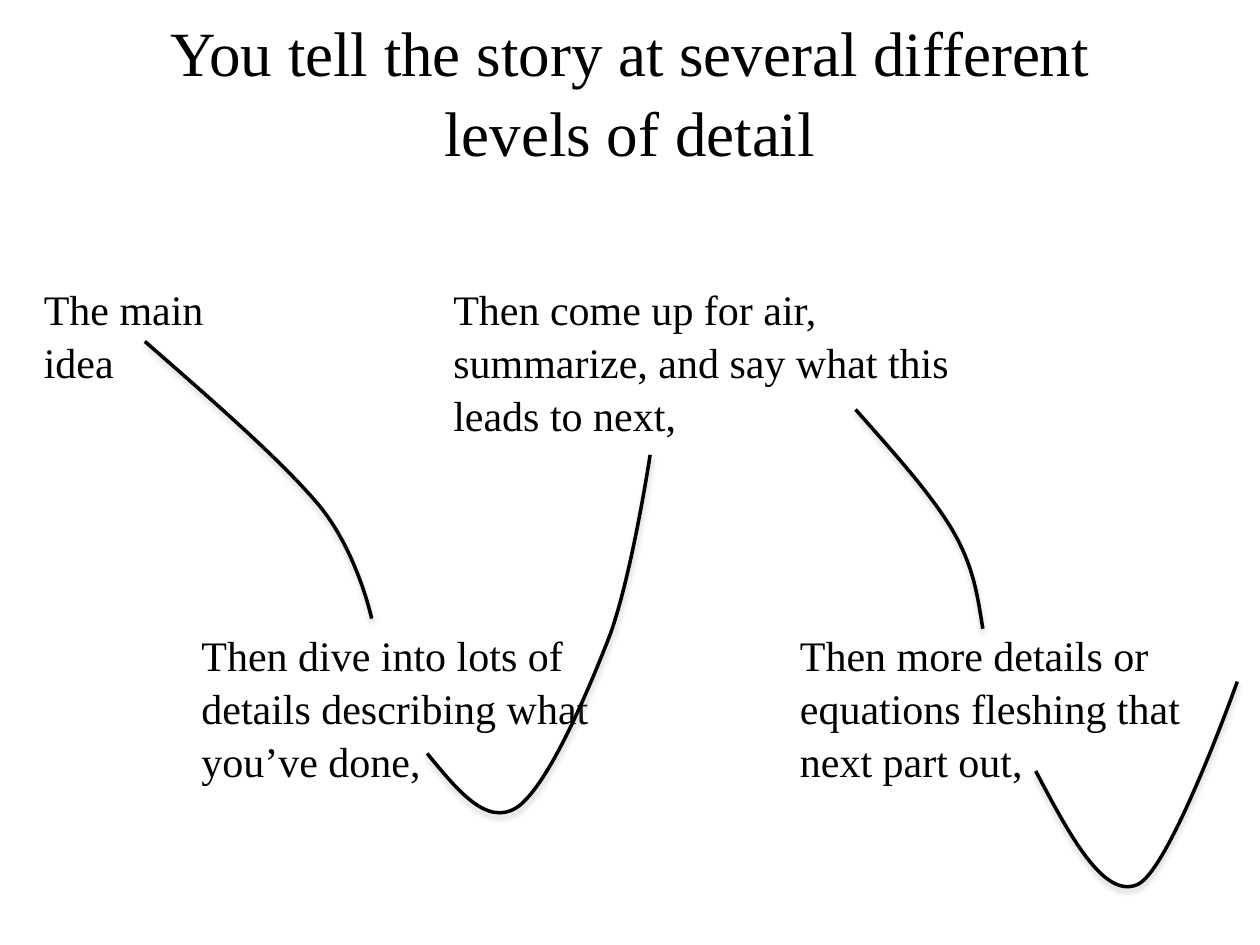
from lxml.etree import SubElement as Sub
from pptx import Presentation
from pptx.dml.color import RGBColor as RGB
from pptx.enum.text import MSO_ANCHOR as Anchor, PP_ALIGN as Align
from pptx.oxml.ns import qn
from pptx.util import Inches, Pt

NOTES = [
    ("The main idea", 0.25, 2.17, 1.6, 0.9),
    ("Then dive into lots of details describing what you’ve done,", 1.5, 4.92, 3.51, 1.22),
    ("Then come up for air, summarize, and say what this leads to next,", 3.5, 2.17, 4.43, 1.22),
    ("Then more details or equations fleshing that next part out,", 6.25, 4.92, 3.51, 1.22),
]
CURVES = [
    [(1.15, 2.71), (1.7, 3.19), (2.24, 3.66), (2.54, 4.02),
     (2.84, 4.39), (2.95, 4.91), (2.95, 4.91)],
    [(3.39, 5.98), (3.63, 6.27), (3.86, 6.56), (4.1, 6.41), (4.34, 6.25),
     (4.65, 5.53), (4.83, 5.07), (5.01, 4.6), (5.16, 3.61), (5.16, 3.61)],
    [(6.79, 3.25), (7.09, 3.59), (7.39, 3.92), (7.56, 4.21),
     (7.73, 4.5), (7.76, 4.74), (7.8, 4.99)],
    [(8.22, 6.12), (8.49, 6.63), (8.76, 7.14), (9.03, 7.02),
     (9.29, 6.9), (9.82, 5.41), (9.82, 5.41)],
]


def color(code):
    return RGB.from_string(code)


def write(frame, text, font="Times New Roman", size=24, ink="000000",
          align=Align.LEFT, anchor=Anchor.TOP, left=0.1):
    frame.word_wrap = True
    frame.vertical_anchor = anchor
    frame.margin_left = Inches(left)
    frame.margin_right = frame.margin_top = frame.margin_bottom = Inches(0.06)
    para = frame.paragraphs[0]
    para.alignment = align
    para.line_spacing = 1.05
    run = para.add_run()
    run.text = text
    run.font.name = font
    run.font.size = Pt(size)
    run.font.color.rgb = color(ink)


class Deck:
    ink = "000000"
    shade = "929292"
    width = 2

    def __init__(self, slide):
        self.slide = slide

    def text(self, text, x, y, w, h, **style):
        box = self.slide.shapes.add_textbox(Inches(x), Inches(y), Inches(w), Inches(h))
        write(box.text_frame, text, ink=self.ink, **style)

    def curve(self, points):
        start, *rest = [(Inches(x), Inches(y)) for x, y in points]
        form = self.slide.shapes.build_freeform(*start)
        form.add_line_segments(rest, close=False)
        shape = form.convert_to_shape()
        shape.fill.background()
        shape.line.color.rgb = color(self.ink)
        shape.line.width = Pt(self.width)
        self.bend(shape)
        self.shadow(shape)

    def bend(self, shape):
        steps = list(shape.element.iter(qn("a:lnTo")))
        trail = steps[0].getparent()
        for i in range(0, len(steps), 3):
            arc = Sub(trail, qn("a:cubicBezTo"))
            for step in steps[i:i + 3]:
                arc.append(step[0])
                trail.remove(step)

    def shadow(self, shape):
        shape.shadow.inherit = False
        effect = shape.element.spPr.find(qn("a:effectLst"))
        outer = Sub(effect, qn("a:outerShdw"), blurRad=str(Pt(3)), dist=str(Pt(2)),
                    dir="5400000", rotWithShape="0")
        tint = Sub(outer, qn("a:srgbClr"), val=self.shade)
        Sub(tint, qn("a:alpha"), val="38000")


def main():
    show = Presentation()
    show.slide_width, show.slide_height = Inches(10), Inches(7.5)
    deck = Deck(show.slides.add_slide(show.slide_layouts[6]))
    deck.text("You tell the story at several different levels of detail",
              0.75, 0, 8.5, 1.42, size=36, align=Align.CENTER,
              anchor=Anchor.MIDDLE, left=0.06)
    for note in NOTES:
        deck.text(*note)
    for points in CURVES:
        deck.curve(points)
    show.save("out.pptx")


if __name__ == "__main__":
    main()
